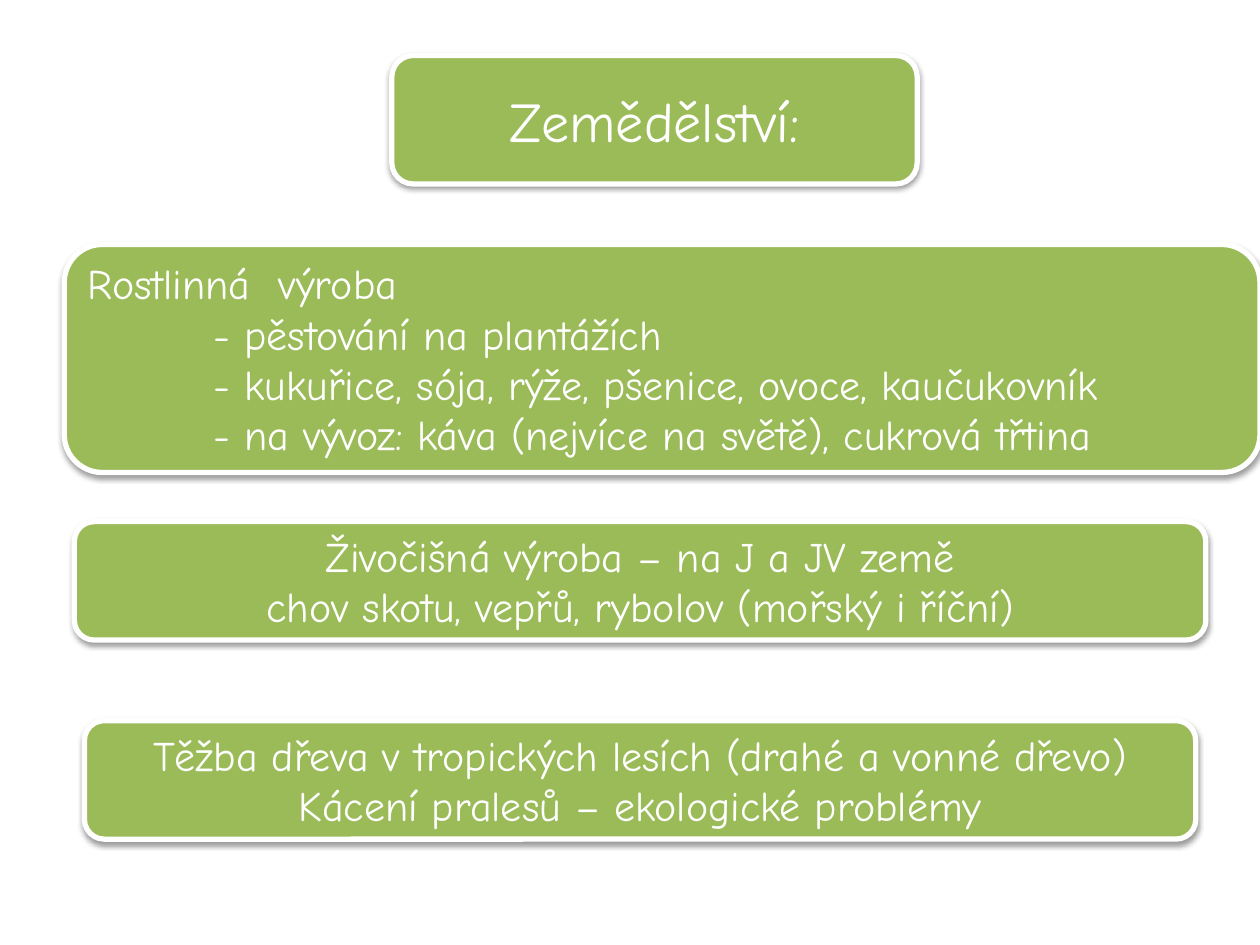
from lxml.etree import SubElement
from pptx import Presentation
from pptx.dml.color import RGBColor
from pptx.enum.shapes import MSO_SHAPE
from pptx.enum.text import MSO_ANCHOR, PP_ALIGN
from pptx.oxml.ns import qn
from pptx.util import Inches, Pt

FONT = "Comic Neue"
GREEN = "9BBB59"
WHITE = "FFFFFF"


def write_text(shape, lines, size=24, align=PP_ALIGN.CENTER, color=WHITE):
    frame = shape.text_frame
    frame.word_wrap = True
    frame.vertical_anchor = MSO_ANCHOR.MIDDLE
    for index, line in enumerate(lines):
        paragraph = frame.add_paragraph() if index else frame.paragraphs[0]
        paragraph.alignment = align
        if line.startswith("\t"):
            tabs = SubElement(paragraph._p.get_or_add_pPr(), qn("a:tabLst"))
            SubElement(tabs, qn("a:tab"), pos=str(Inches(1)), algn="l")
        run = paragraph.add_run()
        run.text = line
        run.font.name = FONT
        run.font.size = Pt(size)
        run.font.color.rgb = RGBColor.from_string(color)


def add_card(slide, left, top, width, height):
    shape = slide.shapes.add_shape(
        MSO_SHAPE.ROUNDED_RECTANGLE,
        Inches(left), Inches(top), Inches(width), Inches(height))
    shape.fill.solid()
    shape.fill.fore_color.rgb = RGBColor.from_string(GREEN)
    shape.line.color.rgb = RGBColor.from_string(WHITE)
    shape.line.width = Pt(3)
    # Soft shadow straight below the card
    shape.shadow.inherit = False
    effects = shape._element.spPr.find(qn("a:effectLst"))
    shadow = SubElement(effects, qn("a:outerShdw"), blurRad="40000",
                        dist="20000", dir="5400000", rotWithShape="0")
    color = SubElement(shadow, qn("a:srgbClr"), val="000000")
    SubElement(color, qn("a:alpha"), val="38000")
    return shape


presentation = Presentation()
presentation.slide_width = Inches(10)
presentation.slide_height = Inches(7.5)
slide = presentation.slides.add_slide(presentation.slide_layouts[6])

# Livestock
livestock = add_card(slide, 0.59, 4.14, 8.98, 0.94)
write_text(livestock, ["Živočišná výroba – na J a JV země",
                       "chov skotu, vepřů, rybolov (mořský i říční)"])

# Title
title = add_card(slide, 3.11, 0.44, 4.17, 1.02)
write_text(title, ["Zemědělství:"], size=32)

# Crops
crops = add_card(slide, 0.51, 1.94, 9.49, 1.81)
write_text(crops, ["Rostlinná  výroba",
                   "\t- pěstování na plantážích",
                   "\t- kukuřice, sója, rýže, pšenice, ovoce, kaučukovník",
                   "\t- na vývoz: káva (nejvíce na světě), cukrová třtina"],
           align=PP_ALIGN.LEFT)

# Forestry
forestry = add_card(slide, 0.67, 5.72, 8.82, 0.94)
write_text(forestry, ["Těžba dřeva v tropických lesích (drahé a vonné dřevo)",
                      "Kácení pralesů – ekologické problémy"])

presentation.save("out.pptx")
